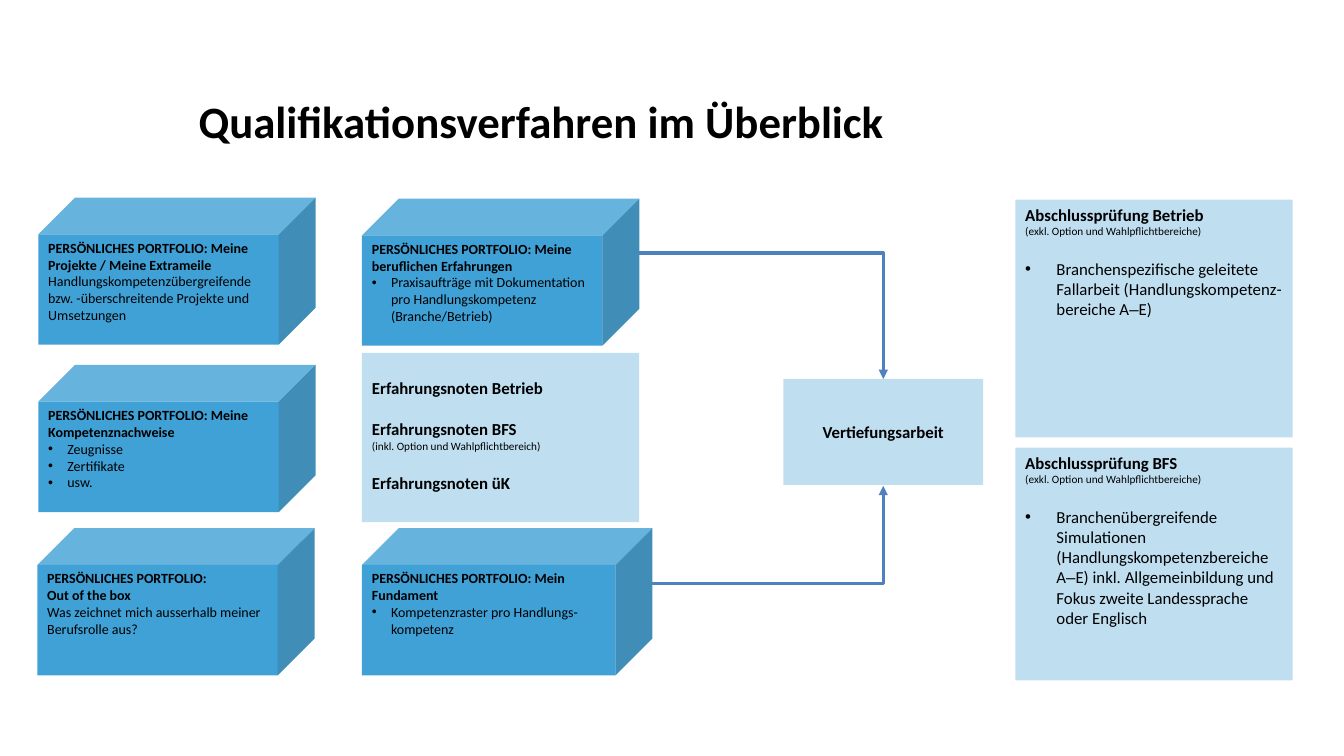
from lxml import etree
from pptx import Presentation, util as u
from pptx.dml.color import RGBColor
from pptx.enum import shapes, text
from pptx.oxml import ns

BLUE = RGBColor(0x00, 0x82, 0xCA)
ARROW = RGBColor(0x4F, 0x81, 0xBD)
BLACK = RGBColor(0, 0, 0)

CUBE, RECT = shapes.MSO_SHAPE.CUBE, shapes.MSO_SHAPE.RECTANGLE
LEFT, CENTER = text.PP_ALIGN.LEFT, text.PP_ALIGN.CENTER
TOP, MIDDLE = text.MSO_ANCHOR.TOP, text.MSO_ANCHOR.MIDDLE
BLANK_LINE = 14.65

STYLES = {
    "title": dict(size=32, bold=True),
    "cube head": dict(size=10, bold=True),
    "cube text": dict(size=10),
    "cube item": dict(size=10, indent=19),
    "head": dict(size=12, bold=True),
    "next head": dict(size=12, bold=True, before=BLANK_LINE),
    "note": dict(size=8),
    "item": dict(size=12, indent=31, before=BLANK_LINE),
}


def px(length):
    return u.Emu(length * 9144)


class Overview:
    """Draws the elements of one slide in a shared style."""

    def __init__(self, width, height):
        self.deck = Presentation()
        self.deck.slide_width, self.deck.slide_height = px(width), px(height)
        self.page = self.deck.slides.add_slide(self.deck.slide_layouts[6])

    def para(self, para, style, words, align):
        look = STYLES[style]
        para.alignment = align
        if "before" in look:
            para.space_before = u.Pt(look["before"])
        if "indent" in look:
            props = para._p.get_or_add_pPr()
            props.set("marL", str(px(look["indent"])))
            props.set("indent", str(-px(look["indent"])))
            etree.SubElement(props, ns.qn("a:buFont")).set("typeface", "Arial")
            etree.SubElement(props, ns.qn("a:buChar")).set("char", "•")
        for piece in filter(None, words.partition("–")):
            span = para.add_run()
            span.text = piece
            span.font.name = "Arial" if piece == "–" else "Calibri"
            span.font.size = u.Pt(look["size"])
            span.font.bold = look.get("bold", False)
            span.font.color.rgb = BLACK

    def fill_text(self, box, paras, align, anchor):
        frame = box.text_frame
        frame.word_wrap = True
        frame.vertical_anchor = anchor
        for number, (style, words) in enumerate(paras):
            para = frame.add_paragraph() if number else frame.paragraphs[0]
            self.para(para, style, words, align)

    def label(self, place, style, words):
        box = self.page.shapes.add_textbox(*map(px, place))
        self.fill_text(box, [(style, words)], CENTER, MIDDLE)

    def block(self, kind, place, opacity, paras, align=LEFT, anchor=TOP):
        box = self.page.shapes.add_shape(kind, *map(px, place))
        box.shadow.inherit = False
        box.line.fill.background()
        box.fill.solid()
        box.fill.fore_color.rgb = BLUE
        color = box._element.spPr.find(ns.qn("a:solidFill"))[0]
        etree.SubElement(color, ns.qn("a:alpha")).set("val", str(opacity * 1000))
        self.fill_text(box, paras, align, anchor)
        return box

    def cube(self, left, top, width, *paras):
        return self.block(CUBE, (left, top, width, 146), 75, paras)

    def panel(self, place, *paras, **layout):
        return self.block(RECT, place, 25, paras, **layout)

    def arrow(self, start, end):
        line = self.page.shapes.add_connector(
            shapes.MSO_CONNECTOR.ELBOW, *map(px, start + end))
        line.line.color.rgb = ARROW
        line.line.width = u.Pt(2.25)
        props = line._element.spPr
        props.find(ns.qn("a:prstGeom")).set("prst", "bentConnector2")
        etree.SubElement(props.find(ns.qn("a:ln")), ns.qn("a:tailEnd")).set("type", "triangle")
        etree.SubElement(props, ns.qn("a:effectLst"))


def main():
    view = Overview(1333, 750)
    view.label((67, 84, 940, 71), "title", "Qualifikationsverfahren im Überblick")

    view.cube(38, 362, 275,
              ("cube head", "PERSÖNLICHES PORTFOLIO: Meine Kompetenznachweise"),
              ("cube item", "Zeugnisse"),
              ("cube item", "Zertifikate"),
              ("cube item", "usw."))
    view.cube(38, 196, 275,
              ("cube head", "PERSÖNLICHES PORTFOLIO: Meine Projekte / Meine Extrameile"),
              ("cube text", "Handlungskompetenzübergreifende bzw. -überschreitende "
                            "Projekte und Umsetzungen"))
    view.cube(37, 524, 275,
              ("cube head", "PERSÖNLICHES PORTFOLIO:"),
              ("cube head", "Out of the box"),
              ("cube text", "Was zeichnet mich ausserhalb meiner Berufsrolle aus?"))
    view.cube(359, 197, 275,
              ("cube head", "PERSÖNLICHES PORTFOLIO: Meine beruflichen Erfahrungen"),
              ("cube item", "Praxisaufträge mit Dokumentation pro Handlungskompetenz "
                            "(Branche/Betrieb)"))
    view.cube(359, 524, 288,
              ("cube head", "PERSÖNLICHES PORTFOLIO: Mein Fundament"),
              ("cube item", "Kompetenzraster pro Handlungs-kompetenz"))

    grades = view.panel((359, 350, 275, 168),
                        ("head", "Erfahrungsnoten Betrieb"),
                        ("next head", "Erfahrungsnoten BFS"),
                        ("note", "(inkl. Option und Wahlpflichtbereich)"),
                        ("next head", "Erfahrungsnoten üK"))
    grades.text_frame.margin_top = px(25)
    view.panel((777, 376, 198, 105), ("head", "Vertiefungsarbeit"),
               align=CENTER, anchor=MIDDLE)
    view.arrow((647, 579), (876, 482))
    view.arrow((634, 251), (876, 376))

    exams = [
        (198, 236, "Betrieb",
         "Branchenspezifische geleitete Fallarbeit (Handlungskompetenz-bereiche A–E)"),
        (444, 231, "BFS",
         "Branchenübergreifende Simulationen (Handlungskompetenzbereiche A–E) inkl. "
         "Allgemeinbildung und Fokus zweite Landessprache oder Englisch"),
    ]
    for top, height, place, task in exams:
        view.panel((1007, top, 275, height),
                   ("head", f"Abschlussprüfung {place}"),
                   ("note", "(exkl. Option und Wahlpflichtbereiche)"),
                   ("item", task))

    view.deck.save("out.pptx")


if __name__ == "__main__":
    main()
